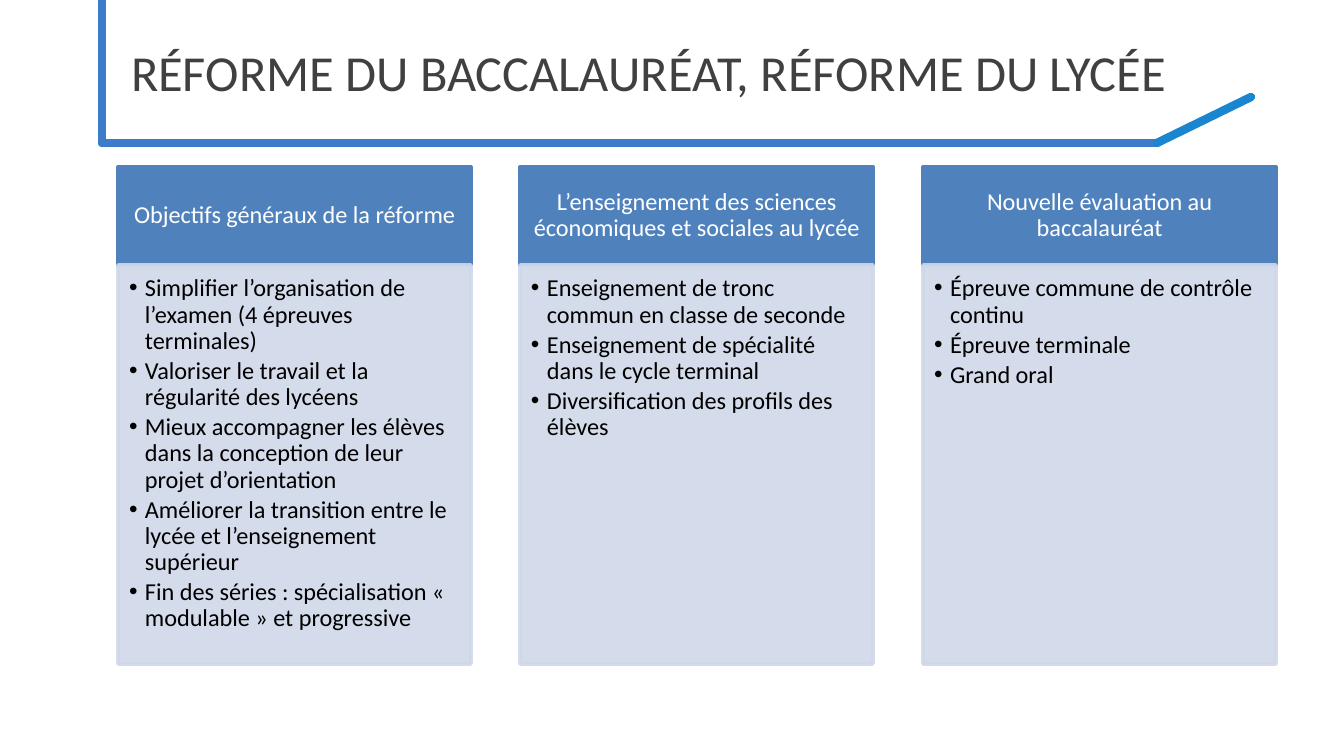
"""Builds a slide on the reform of the French baccalauréat and lycée."""
from lxml import etree
from pptx import Presentation
from pptx.dml.color import RGBColor
from pptx.enum.shapes import MSO_CONNECTOR, MSO_SHAPE
from pptx.enum.text import MSO_ANCHOR, MSO_AUTO_SIZE, PP_ALIGN
from pptx.oxml.ns import qn
from pptx.util import Pt

STRAIGHT, RECTANGLE = MSO_CONNECTOR.STRAIGHT, MSO_SHAPE.RECTANGLE
TOP, MIDDLE = MSO_ANCHOR.TOP, MSO_ANCHOR.MIDDLE
LEFT, CENTER = PP_ALIGN.LEFT, PP_ALIGN.CENTER
NO_FIT = MSO_AUTO_SIZE.NONE

EMU_PER_PX = 914400 / 134.4
COMPARISON_LAYOUT = 4
COLOURS = {
    "frame": "3D7CC9",
    "flick": "1A86D0",
    "title": "404040",
    "heading": "4F81BD",
    "panel": "D0D8E8",
    "light": "FFFFFF",
    "dark": "000000",
}

TITLE = "RÉFORME DU BACCALAURÉAT, RÉFORME DU LYCÉE"
COLUMNS = [
    ("Objectifs généraux de la réforme", [
        "Simplifier l’organisation de l’examen (4 épreuves terminales)",
        "Valoriser le travail et la régularité des lycéens",
        "Mieux accompagner les élèves dans la conception de leur projet d’orientation",
        "Améliorer la transition entre le lycée et l’enseignement supérieur",
        "Fin des séries : spécialisation « modulable » et progressive",
    ]),
    ("L’enseignement des sciences économiques et sociales au lycée", [
        "Enseignement de tronc commun en classe de seconde",
        "Enseignement de spécialité dans le cycle terminal",
        "Diversification des profils des élèves",
    ]),
    ("Nouvelle évaluation au baccalauréat", [
        "Épreuve commune de contrôle continu",
        "Épreuve terminale",
        "Grand oral",
    ]),
]
FRAME = [
    ((102, 143), (1157, 143), "frame"),
    ((1157, 143), (1251, 97), "flick"),
    ((102, 143), (102, 0), "frame"),
]
COLUMN_LEFT, COLUMN_WIDTH, COLUMN_SPAN = 118, 353, 805
HEADING_TOP, HEADING_HEIGHT, PANEL_HEIGHT = 167, 98, 399


def px(length):
    return round(length * EMU_PER_PX)


def colour(name):
    return RGBColor.from_string(COLOURS[name])


def write(frame, lines, *, size, ink, align=LEFT, anchor=TOP, insets=(13, 7, 13, 7),
          spacing=0.9, after=0, hanging=0):
    frame.word_wrap = True
    frame.auto_size = NO_FIT
    frame.vertical_anchor = anchor
    frame.margin_left, frame.margin_top, frame.margin_right, frame.margin_bottom = map(px, insets)
    frame.text = "\n".join(lines)
    for paragraph in frame.paragraphs:
        paragraph.alignment = align
        paragraph.line_spacing = spacing
        paragraph.space_before, paragraph.space_after = Pt(0), Pt(after)
        font = paragraph.runs[0].font
        font.name, font.size, font.bold = "Calibri", Pt(size), False
        font.color.rgb = colour(ink)
        if hanging:
            properties = paragraph._p.get_or_add_pPr()
            properties.set("marL", str(px(hanging)))
            properties.set("indent", str(-px(hanging)))
            etree.SubElement(properties, qn("a:buFont"), typeface="Arial")
            etree.SubElement(properties, qn("a:buChar"), char="•")


class SlideBuilder:
    """Holds the slide and draws each kind of element in its style."""

    def __init__(self, deck):
        self.slide = deck.slides.add_slide(deck.slide_layouts[COMPARISON_LAYOUT])
        self.title_holder, *self.list_holders = self.slide.placeholders

    def place(self, shape, left, top, width, height):
        shape.left, shape.top, shape.width, shape.height = map(px, (left, top, width, height))

    def paint(self, shape, name, opacity=100):
        shape.fill.solid()
        shape.fill.fore_color.rgb = colour(name)
        shape.line.color.rgb = colour(name)
        shape.line.width = Pt(2)
        if opacity < 100:
            for tint in shape._element.spPr.iter(qn("a:srgbClr")):
                etree.SubElement(tint, qn("a:alpha"), val=str(opacity * 1000))

    def title(self, text):
        self.place(self.title_holder, 118, 0, 1159, 143)
        write(self.title_holder.text_frame, [text], size=27, ink="title", anchor=MIDDLE, spacing=1.0)

    def stroke(self, start, end, name):
        line = self.slide.shapes.add_connector(STRAIGHT, *map(px, start + end))
        line.line.color.rgb = colour(name)
        line.line.width = Pt(4.5)
        line.line._get_or_add_ln().set("cap", "rnd")
        etree.SubElement(line._element.spPr, qn("a:effectLst"))

    def heading(self, text, left):
        box = self.slide.shapes.add_shape(RECTANGLE, 0, 0, 0, 0)
        self.place(box, left, HEADING_TOP, COLUMN_WIDTH, HEADING_HEIGHT)
        box.shadow.inherit = False
        self.paint(box, "heading")
        write(box.text_frame, [text], size=13, ink="light", align=CENTER, anchor=MIDDLE,
              insets=(13, 8, 13, 8))

    def panel(self, points, left):
        body = self.list_holders.pop(0)
        self.place(body, left, HEADING_TOP + HEADING_HEIGHT, COLUMN_WIDTH, PANEL_HEIGHT)
        self.paint(body, "panel", opacity=90)
        write(body.text_frame, points, size=13, ink="dark", insets=(11, 11, 13, 15),
              after=2, hanging=16)
        body._element.getparent().append(body._element)

    def drop_spare_holders(self):
        for holder in self.list_holders:
            holder._element.getparent().remove(holder._element)


def main():
    deck = Presentation()
    deck.slide_width, deck.slide_height = px(1344), px(756)
    builder = SlideBuilder(deck)
    for start, end, name in FRAME:
        builder.stroke(start, end, name)
    builder.title(TITLE)
    for index, (heading, points) in enumerate(COLUMNS):
        left = COLUMN_LEFT + COLUMN_SPAN * index // 2
        builder.heading(heading, left)
        builder.panel(points, left)
    builder.drop_spare_holders()
    deck.save("out.pptx")


if __name__ == "__main__":
    main()
